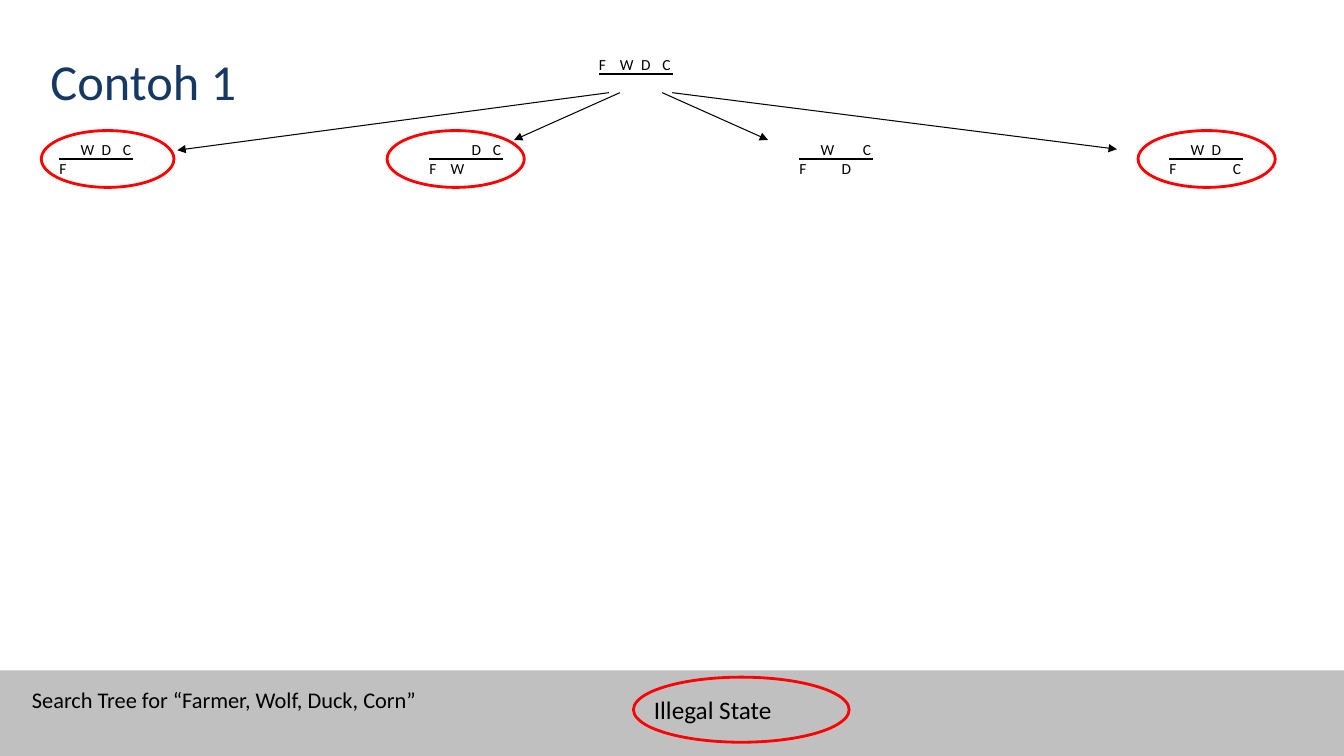
from lxml import etree
from pptx import Presentation
from pptx.dml.color import RGBColor
from pptx.enum import shapes, text
from pptx.oxml import ns
from pptx.util import Pt

HUES = {"ink": "000000", "navy": "163964", "band": "C0C0C0", "red": "FF0000"}


def write(place, box, words, size, inset=None):
    label = place.add_textbox(*map(Pt, box))
    frame = label.text_frame
    frame.word_wrap = True
    frame.auto_size = text.MSO_AUTO_SIZE.SHAPE_TO_FIT_TEXT
    if inset is not None:
        frame.margin_left = frame.margin_right = Pt(inset)
        frame.margin_top = frame.margin_bottom = Pt(inset)
    frame.text = words
    font = frame.paragraphs[0].runs[0].font
    font.name, font.size = "Calibri", Pt(size)
    font.color.rgb = RGBColor.from_string(HUES["ink"])
    return label


def draw(place, ends, width, arrow=False):
    line = place.add_connector(shapes.MSO_CONNECTOR.STRAIGHT, *map(Pt, ends))
    line.line.width = Pt(width)
    line.line.color.rgb = RGBColor.from_string(HUES["ink"])
    props = line._element.spPr
    if arrow:
        etree.SubElement(props.find(ns.qn("a:ln")), ns.qn("a:tailEnd"), type="triangle")
    etree.SubElement(props, ns.qn("a:effectLst"))


deck = Presentation()
deck.slide_width, deck.slide_height = Pt(960), Pt(540)
slide = deck.slides.add_slide(deck.slide_layouts[5])
items = slide.shapes

title = items.title
title.left, title.top, title.width, title.height = map(Pt, (28.8, 13.7, 828, 92.9))
title.text_frame.text = "Contoh 1"
title.text_frame.vertical_anchor = text.MSO_ANCHOR.MIDDLE
head = title.text_frame.paragraphs[0]
head.alignment = text.PP_ALIGN.LEFT
head.line_spacing = 0.9
font = head.runs[0].font
font.name, font.size = "Calibri", Pt(36)
font.color.rgb = RGBColor.from_string(HUES["navy"])

band = items.add_shape(shapes.MSO_SHAPE.RECTANGLE, 0, Pt(478.8), Pt(960), Pt(61.2))
band.shadow.inherit = False
band.fill.solid()
band.fill.fore_color.rgb = RGBColor.from_string(HUES["band"])
band.line.fill.background()

step, high = 15.12, 13.5
left, gap, level = 42.4, 264.3, 113.7
states = [(427.7, 52.7, "")]
states += [(left + gap * i, level, gone) for i, gone in enumerate(("F", "FW", "FD", "FC"))]
for x, y, gone in states:
    group = items.add_group_shape()
    for i, who in enumerate("FWDC"):
        top = y if who in gone else y - high
        write(group.shapes, (x + step * i, top, step, high), who, 11, 0)
    draw(group.shapes, (x, y, x + 52.8, y), 1.5)

for ends in (
    (434.9, 66.2, 126.7, 107.3),
    (480.2, 66.2, 797.8, 106.6),
    (442.8, 66.2, 367.2, 100),
    (473, 66.2, 548.6, 100),
):
    draw(items, ends, 0.75, True)

for box in (
    (29.5, 93.3, 94.8, 40.6),
    (812.9, 93.3, 98, 40.6),
    (276.5, 93.3, 98, 40.6),
    (452.5, 483.7, 154.1, 46.5),
):
    ring = items.add_shape(shapes.MSO_SHAPE.OVAL, *map(Pt, box))
    ring.shadow.inherit = False
    ring.fill.background()
    ring.line.width = Pt(2)
    ring.line.color.rgb = RGBColor.from_string(HUES["red"])

key = write(items, (460, 492.5, 99.4, 29), "Illegal State", 18)
key.text_frame.word_wrap = False
write(items, (15.8, 486.8, 416, 26.6), "Search Tree for “Farmer, Wolf, Duck, Corn”", 16)

deck.save("out.pptx")
